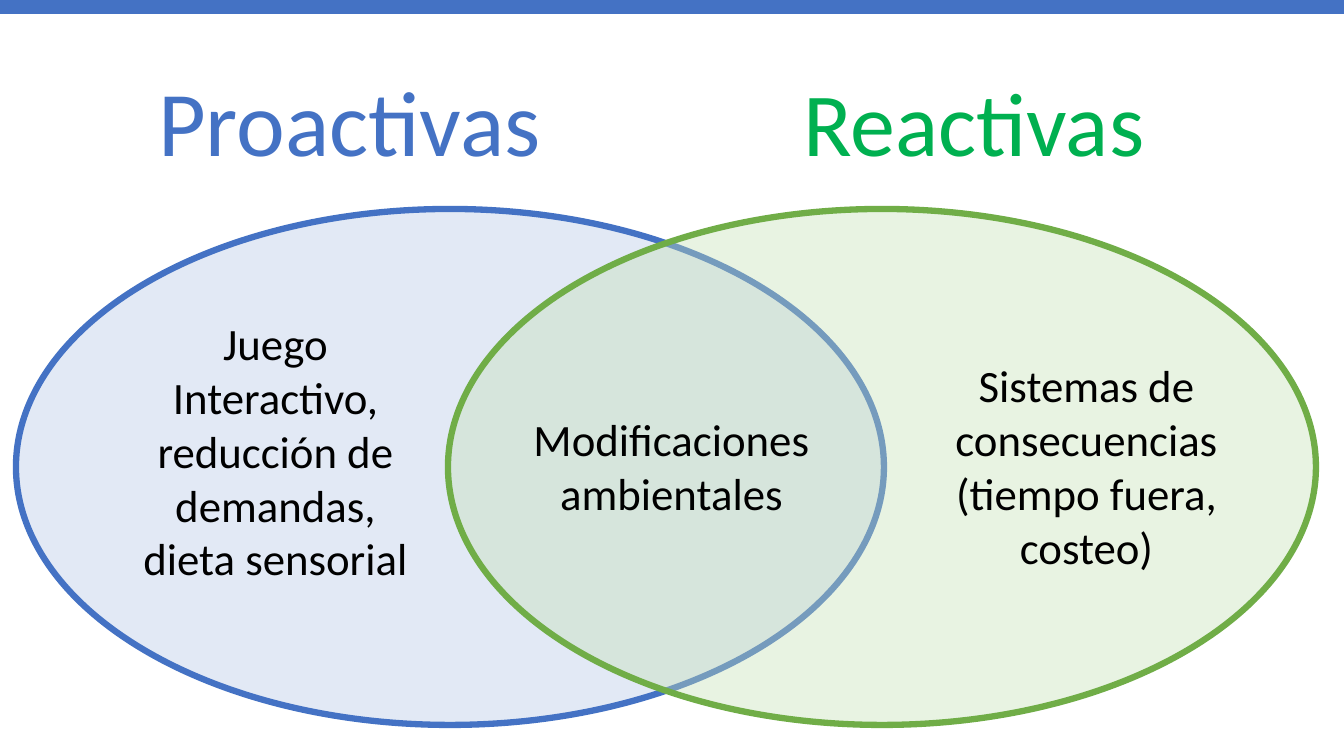
from lxml import etree
from pptx import Presentation
from pptx.dml.color import RGBColor
from pptx.enum.shapes import MSO_SHAPE
from pptx.enum.text import MSO_ANCHOR, MSO_AUTO_SIZE, PP_ALIGN
from pptx.oxml.ns import qn
from pptx.util import Pt

RECT, OVAL = MSO_SHAPE.RECTANGLE, MSO_SHAPE.OVAL
TOP, BOTTOM = MSO_ANCHOR.TOP, MSO_ANCHOR.BOTTOM
CENTER = PP_ALIGN.CENTER
NO_FIT, GROW = MSO_AUTO_SIZE.NONE, MSO_AUTO_SIZE.SHAPE_TO_FIT_TEXT

# Content: lengths in px, boxes as left, top, width, height
WIDE, HIGH = 1344, 756
FONT = "Calibri"
COLORS = {
    "blue": "4472C4", "green": "00B050", "black": "000000",
    "pale blue": "B4C7E7", "pale green": "C5E0B4", "leaf": "70AD47",
}
BAR = (0, 0, WIDE, 14)
TITLE = ("Proactivas", (28, 65, 643, 117), 66, "blue")
HEAD = ("Reactivas", (633, 41, 682, 140), 64.3, "green")
OVALS = [("pale blue", "blue"), ("pale green", "leaf")]
OVAL_BOX = (16, 209, 868, 516)
OVAL_STEP = 432
OPACITY = 38
NOTE_WIDTH = 311
NOTES = [
    ("Modificaciones ambientales", 516, 407, 119),
    ("Sistemas de consecuencias (tiempo fuera, costeo)", 931, 353, 228),
    ("Juego Interactivo, reducción de demandas, dieta sensorial", 120, 311, 281),
]

SCALE = 914400 / 100.8


def emu(*sizes):
    return [round(size * SCALE) for size in sizes]


def color(name):
    return RGBColor.from_string(COLORS[name])


def write(shape, text, size, tint, anchor=TOP, fit=NO_FIT, space=1.0):
    frame = shape.text_frame
    frame.text = text
    frame.word_wrap = True
    frame.auto_size = fit
    frame.vertical_anchor = anchor
    para = frame.paragraphs[0]
    para.alignment = CENTER
    para.line_spacing = space
    font = para.runs[0].font
    font.name, font.size = FONT, Pt(size)
    font.color.rgb = color(tint)


def draw(slide, kind, box, fill):
    shape = slide.shapes.add_shape(kind, *emu(*box))
    shape.shadow.inherit = False
    shape.fill.solid()
    shape.fill.fore_color.rgb = color(fill)
    return shape


def fade(shape, percent):
    tint = shape.fill._xPr.find(qn("a:solidFill"))[0]
    etree.SubElement(tint, qn("a:alpha"), val=str(percent * 1000))


def main():
    deck = Presentation()
    deck.slide_width, deck.slide_height = emu(WIDE, HIGH)
    slide = deck.slides.add_slide(deck.slide_layouts[5])

    # Title, top bar and second heading
    text, box, size, tint = TITLE
    title = slide.shapes.title
    title.left, title.top, title.width, title.height = emu(*box)
    write(title, text, size, tint, BOTTOM, space=0.9)

    draw(slide, RECT, BAR, "blue").line.fill.background()

    text, box, size, tint = HEAD
    head = slide.shapes.add_textbox(*emu(*box))
    write(head, text, size, tint, BOTTOM, space=0.9)

    # Overlapping ovals
    left, top, width, height = OVAL_BOX
    for i, (fill, edge) in enumerate(OVALS):
        oval = draw(slide, OVAL, (left + i * OVAL_STEP, top, width, height), fill)
        fade(oval, OPACITY)
        oval.line.color.rgb = color(edge)
        oval.line.width = Pt(4.5)

    # Notes inside the ovals
    for text, left, top, height in NOTES:
        note = slide.shapes.add_textbox(*emu(left, top, NOTE_WIDTH, height))
        write(note, text, 32, "black", fit=GROW)

    deck.save("out.pptx")


if __name__ == "__main__":
    main()
